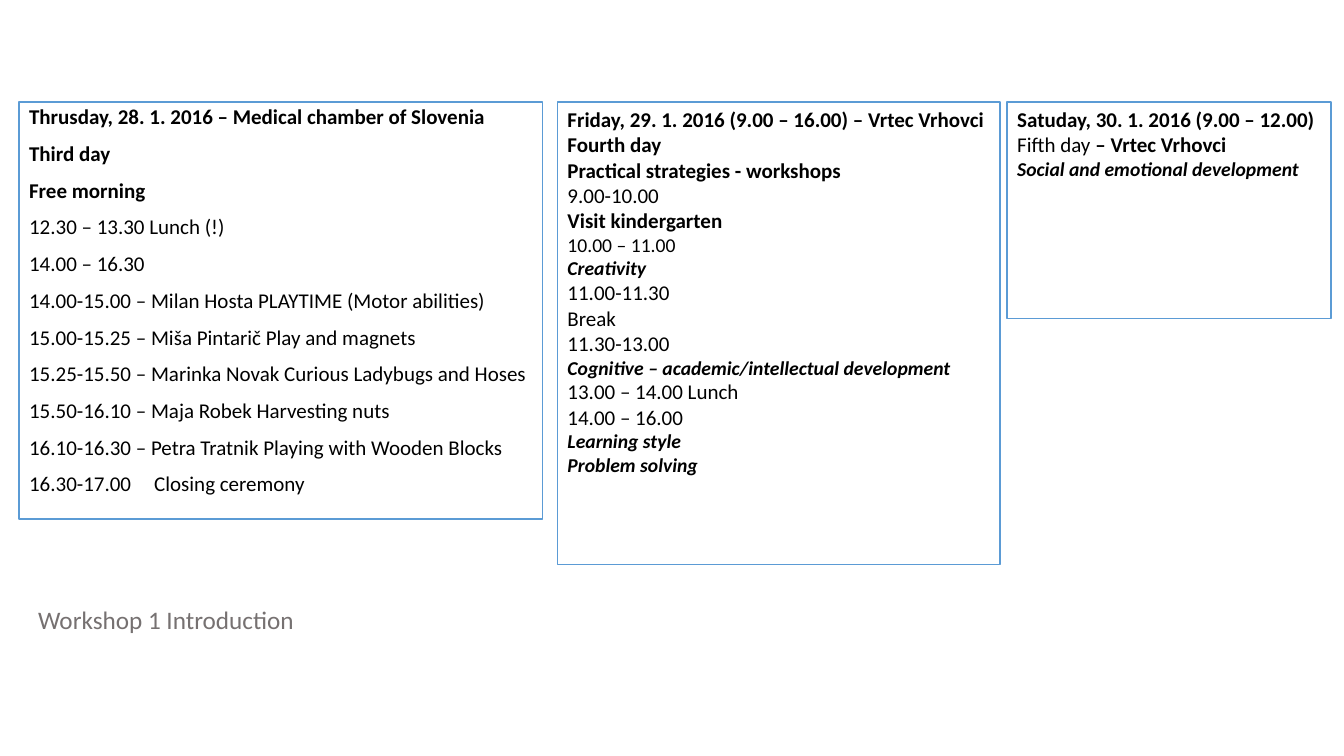
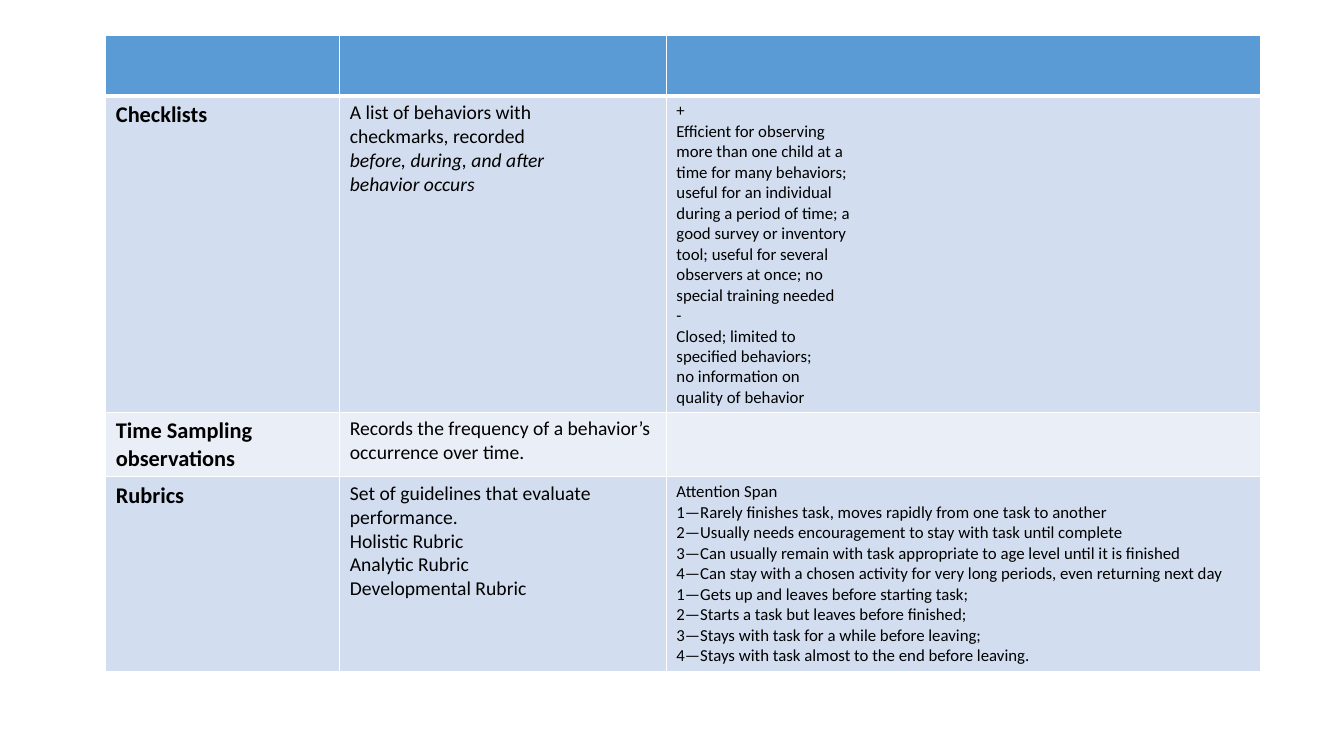
import pptx
import pptx.dml.color
import pptx.enum.shapes
import pptx.enum.text
import pptx.oxml
import pptx.oxml.ns
import pptx.util
from dataclasses import dataclass
from typing import NamedTuple

Inches = pptx.util.Inches
Pt = pptx.util.Pt


# Theme: colours, font and type sizes
@dataclass(frozen=True)
class Theme:
    font: str = "Calibri"
    text: str = "000000"
    muted: str = "767171"
    accent: str = "5B9BD5"
    band_dark: str = "D2DEEF"
    band_light: str = "EAEFF7"
    border: str = "FFFFFF"
    caption: int = 18
    row_title: int = 16
    body: int = 15
    cell: int = 14
    topic: int = 14
    detail: int = 12


THEME = Theme()


class Span(NamedTuple):
    text: str
    size: int = THEME.body
    bold: bool = False
    italic: bool = False
    color: str = THEME.text


Para = list[Span]


@dataclass(frozen=True)
class DayBox:
    left: float
    width: float
    height: float
    paras: list[Para]
    line_spacing: float = 1.0
    space_before: int = 0
    tab: float = 0


# Text styles
def plain(*lines: str, size: int = THEME.body) -> list[Para]:
    return [[Span(line, size)] for line in lines]


def bold(*lines: str, size: int = THEME.body) -> list[Para]:
    return [[Span(line, size, bold=True)] for line in lines]


def topic(*lines: str) -> list[Para]:
    return [[Span(line, THEME.topic, True, True)] for line in lines]


# Drawing helpers
def rgb(color: str) -> pptx.dml.color.RGBColor:
    return pptx.dml.color.RGBColor.from_string(color)


def write(tf, paras: list[Para], line_spacing: float = 1.0,
          space_before: int = 0, tab: float = 0) -> None:
    for i, spans in enumerate(paras):
        p = tf.paragraphs[0] if i == 0 else tf.add_paragraph()
        p.alignment = pptx.enum.text.PP_ALIGN.LEFT
        p.line_spacing = line_spacing
        p.space_before = Pt(space_before if i else 0)
        if tab and any("\t" in span.text for span in spans):
            p._p.get_or_add_pPr().append(pptx.oxml.parse_xml(
                f'<a:tabLst {pptx.oxml.ns.nsdecls("a")}>'
                f'<a:tab pos="{Inches(tab)}" algn="l"/></a:tabLst>'))
        for span in spans:
            r = p.add_run()
            r.text = span.text
            r.font.name = THEME.font
            r.font.size = Pt(span.size)
            r.font.bold = span.bold
            r.font.italic = span.italic
            r.font.color.rgb = rgb(span.color)


def add_day_box(s, box: DayBox) -> None:
    sp = s.shapes.add_shape(
        pptx.enum.shapes.MSO_SHAPE.RECTANGLE, Inches(box.left), Inches(1.01),
        Inches(box.width), Inches(box.height))
    sp.shadow.inherit = False
    sp.fill.background()
    sp.line.color.rgb = rgb(THEME.accent)
    sp.line.width = Pt(1.25)
    tf = sp.text_frame
    tf.word_wrap = True
    tf.vertical_anchor = pptx.enum.text.MSO_ANCHOR.TOP
    write(tf, box.paras, box.line_spacing, box.space_before, box.tab)


def add_caption(s, text: str) -> None:
    sp = s.shapes.add_textbox(Inches(0.28), Inches(5.95), Inches(3.95), Inches(0.4))
    sp.text_frame.word_wrap = True
    write(sp.text_frame, [[Span(text, THEME.caption, color=THEME.muted)]])


def set_borders(cell, top: float = 1, bottom: float = 1) -> None:
    tc_pr = cell._tc.get_or_add_tcPr()
    for side, width in (("L", 1), ("R", 1), ("T", top), ("B", bottom)):
        tc_pr.append(pptx.oxml.parse_xml(
            f'<a:ln{side} {pptx.oxml.ns.nsdecls("a")} w="{Pt(width)}">'
            f'<a:solidFill><a:srgbClr val="{THEME.border}"/></a:solidFill>'
            f'</a:ln{side}>'))


def add_methods_table(s, rows: list[list[list[Para]]]) -> None:
    widths, heights = (2.32, 3.24, 5.89), (0.6, 3.14, 0.64, 1.93)
    table = s.shapes.add_table(
        len(heights), len(widths), Inches(1.05), Inches(0.35),
        Inches(sum(widths)), Inches(sum(heights))).table
    table.horz_banding = False
    for col, width in zip(table.columns, widths):
        col.width = Inches(width)
    for i, (row, height) in enumerate(zip(table.rows, heights)):
        row.height = Inches(height)
        if i == 0:
            fill = THEME.accent
        else:
            fill = THEME.band_dark if i % 2 else THEME.band_light
        for cell, paras in zip(row.cells, rows[i]):
            set_borders(cell, top=3 if i == 1 else 1, bottom=3 if i == 0 else 1)
            cell.fill.solid()
            cell.fill.fore_color.rgb = rgb(fill)
            write(cell.text_frame, paras)


# Slide 1: programme by day
DAYS = [
    DayBox(
        0.19, 5.19, 4.14,
        bold("Thrusday, 28. 1. 2016 – Medical chamber of Slovenia",
             "Third day", "Free morning")
        + plain("12.30 – 13.30 Lunch (!)",
                "14.00 – 16.30",
                "14.00-15.00 – Milan Hosta PLAYTIME (Motor abilities)",
                "15.00-15.25 – Miša Pintarič Play and magnets",
                "15.25-15.50 – Marinka Novak Curious Ladybugs and Hoses",
                "15.50-16.10 – Maja Robek Harvesting nuts",
                "16.10-16.30 – Petra Tratnik Playing with Wooden Blocks",
                "16.30-17.00\tClosing ceremony"),
        line_spacing=0.9, space_before=10, tab=1.24),
    DayBox(
        5.53, 4.39, 4.59,
        bold("Friday, 29. 1. 2016 (9.00 – 16.00) – Vrtec Vrhovci",
             "Fourth day", "Practical strategies - workshops")
        + plain("9.00-10.00")
        + bold("Visit kindergarten")
        + plain("10.00 – 11.00", size=THEME.topic)
        + topic("Creativity")
        + plain("11.00-11.30", "Break", "11.30-13.00")
        + topic("Cognitive – academic/intellectual development")
        + plain("13.00 – 14.00 Lunch", "14.00 – 16.00")
        + topic("Learning style", "Problem solving")),
    DayBox(
        9.99, 3.21, 2.15,
        bold("Satuday, 30. 1. 2016 (9.00 – 12.00)")
        + [[Span("Fifth day "), Span("– Vrtec Vrhovci", bold=True)]]
        + topic("Social and emotional development")),
]

# Slide 2: observation methods
METHODS = [
    [[], [], []],
    [
        bold("Checklists", size=THEME.row_title),
        plain("A list of behaviors with", "checkmarks, recorded", size=THEME.cell)
        + [[Span(line, THEME.cell, italic=True)]
           for line in ("before, during, and after", "behavior occurs")],
        plain("+", "Efficient for observing", "more than one child at a",
              "time for many behaviors;", "useful for an individual",
              "during a period of time; a", "good survey or inventory",
              "tool; useful for several", "observers at once; no",
              "special training needed", "-", "Closed; limited to",
              "specified behaviors;", "no information on",
              "quality of behavior", size=THEME.detail),
    ],
    [
        bold("Time Sampling observations", size=THEME.row_title),
        plain("Records the frequency of a behavior’s occurrence over time.",
              size=THEME.cell),
        [],
    ],
    [
        bold("Rubrics", size=THEME.row_title),
        plain("Set of guidelines that evaluate performance.", "Holistic Rubric",
              "Analytic Rubric", "Developmental Rubric", size=THEME.cell),
        plain("Attention Span",
              "1—Rarely finishes task, moves rapidly from one task to another",
              "2—Usually needs encouragement to stay with task until complete",
              "3—Can usually remain with task appropriate to age level until it is finished",
              "4—Can stay with a chosen activity for very long periods, even returning next day",
              "1—Gets up and leaves before starting task;",
              "2—Starts a task but leaves before finished;",
              "3—Stays with task for a while before leaving;",
              "4—Stays with task almost to the end before leaving.",
              size=THEME.detail),
    ],
]


def main() -> None:
    prs = pptx.Presentation()
    prs.slide_width, prs.slide_height = Inches(13.33), Inches(7.5)
    blank = prs.slide_layouts[6]

    s = prs.slides.add_slide(blank)
    for box in DAYS:
        add_day_box(s, box)
    add_caption(s, "Workshop 1 Introduction")

    s = prs.slides.add_slide(blank)
    add_methods_table(s, METHODS)

    prs.save("out.pptx")


if __name__ == "__main__":
    main()
